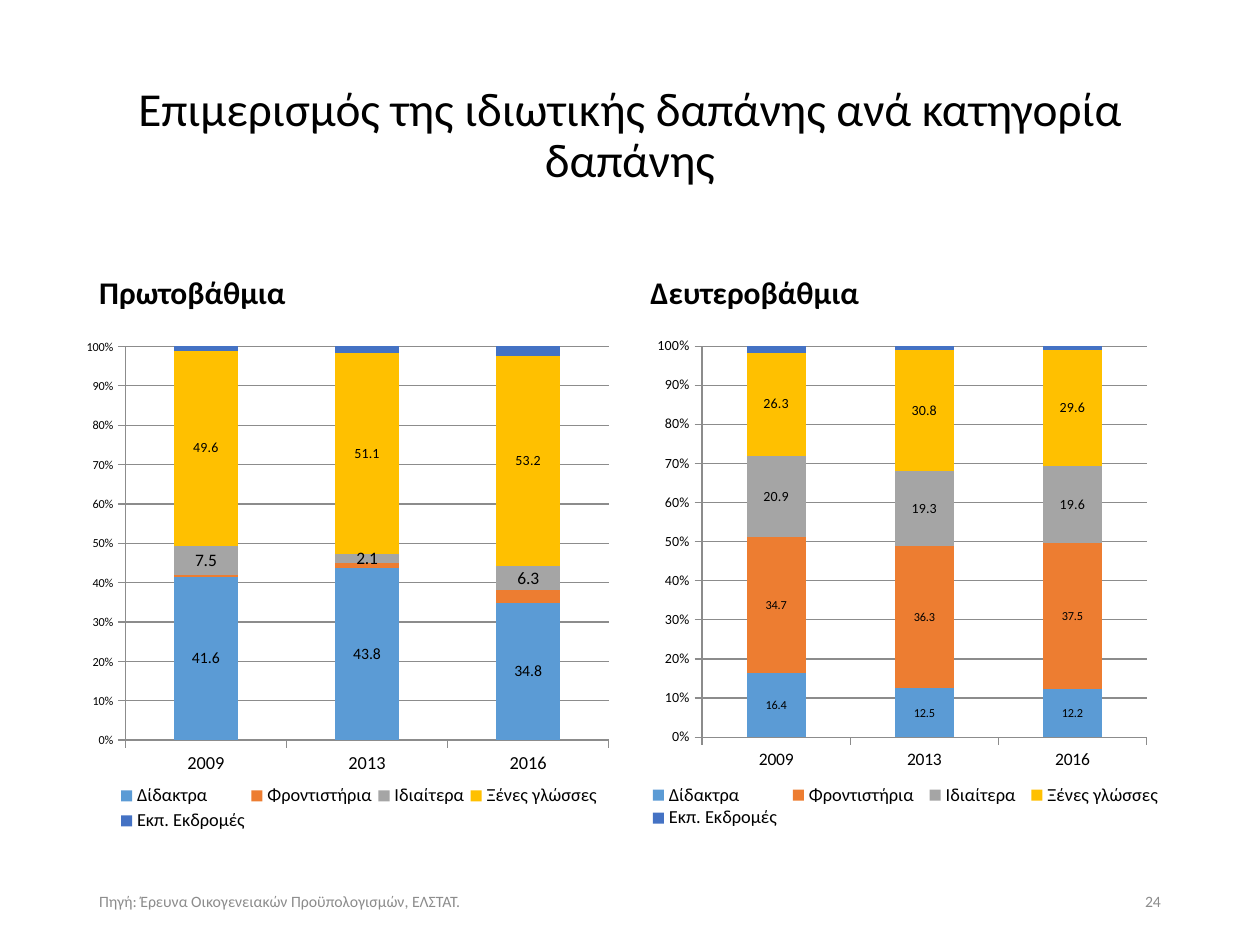
from lxml import etree
from pptx import Presentation
from pptx.chart import data as chart_data
from pptx.dml import color
from pptx.enum import chart as charts, text
from pptx.util import Pt

FONT = "Calibri"
YEARS = ["2009", "2013", "2016"]
CATEGORIES = ["Δίδακτρα", "Φροντιστήρια", "Ιδιαίτερα", "Ξένες γλώσσες", "Εκπ. Εκδρομές"]
COLOURS = ["5B9BD5", "ED7D31", "A5A5A5", "FFC000", "4472C4"]
LEFT, RIGHT = 49.5, 364.5
LEFT_WIDTH, RIGHT_WIDTH = 304.5, 306

PRIMARY = {
    "place": (LEFT, 186, LEFT_WIDTH, 300),
    "values": [(41.6, 43.8, 34.8), (0.3, 1.3, 3.2), (7.5, 2.1, 6.3),
               (49.6, 51.1, 53.2), (1.1, 1.7, 2.5)],
    "label_sizes": [9, None, 10, 8, None],
    "axis_sizes": (10.5, 7),
    "plot": (0.07, 0.04, 0.91, 0.75),
    "legend": (0.05, 0.87, 0.92, 0.1),
}
SECONDARY = {
    "place": (RIGHT, 192, RIGHT_WIDTH, 294),
    "values": [(16.4, 12.5, 12.2), (34.7, 36.3, 37.5), (20.9, 19.3, 19.6),
               (26.3, 30.8, 29.6), (1.7, 1.1, 1.1)],
    "label_sizes": [7, 7, 8, 8, None],
    "axis_sizes": (10, 8),
    "plot": (0.12, 0.02, 0.83, 0.76),
    "legend": (0.01, 0.87, 0.98, 0.09),
}


def rgb(value):
    return color.RGBColor.from_string(value)


def style_font(font, size, colour="000000", bold=False):
    font.name = FONT
    font.size = Pt(size)
    font.bold = bold
    font.color.rgb = rgb(colour)


def place_shape(shape, left, top, width, height):
    shape.left, shape.top = Pt(left), Pt(top)
    shape.width, shape.height = Pt(width), Pt(height)


def write_text(box, words, size, colour="000000", bold=False,
               align=text.PP_ALIGN.LEFT, anchor=text.MSO_ANCHOR.MIDDLE,
               line=1.0, before=0):
    frame = box.text_frame
    frame.word_wrap = True
    frame.auto_size = text.MSO_AUTO_SIZE.NONE
    frame.vertical_anchor = anchor
    para = frame.paragraphs[0]
    para.alignment = align
    para.line_spacing = line
    para.space_before = Pt(before)
    span = para.add_run()
    span.text = words
    style_font(span.font, size, colour, bold)


def add_title(page, words):
    place_shape(page.shapes.title, LEFT, 48, 621, 60)
    write_text(page.shapes.title, words, 27, align=text.PP_ALIGN.CENTER, line=0.9)


def add_heading(box, words, left, width):
    place_shape(box, left, 152.5, width, 29)
    write_text(box, words, 18, bold=True, anchor=text.MSO_ANCHOR.BOTTOM,
               line=0.9, before=7.5)


def add_footer(page, words, left, width, align):
    box = page.shapes.add_textbox(Pt(left), Pt(500.5), Pt(width), Pt(29))
    write_text(box, words, 9, "8C8C8C", align=align)


def set_layout(chart, part, index, bounds, inner=False):
    space = chart.element.nsmap["c"]
    parent = chart.element.find(f".//{{{space}}}{part}")
    for old in parent.findall(f"{{{space}}}layout"):
        parent.remove(old)
    layout = etree.Element(f"{{{space}}}layout")
    manual = etree.SubElement(layout, f"{{{space}}}manualLayout")
    settings = [("layoutTarget", "inner")] if inner else []
    settings += [("xMode", "edge"), ("yMode", "edge")]
    settings += zip("xywh", bounds)
    for name, value in settings:
        etree.SubElement(manual, f"{{{space}}}{name}", val=str(value))
    parent.insert(index, layout)


def style_axis(axis, size):
    axis.major_tick_mark = charts.XL_TICK_MARK.OUTSIDE
    axis.minor_tick_mark = charts.XL_TICK_MARK.NONE
    axis.format.line.color.rgb = rgb("8C8C8C")
    axis.format.line.width = Pt(0.75)
    style_font(axis.tick_labels.font, size)


def style_series(series, colour, label_size):
    series.format.fill.solid()
    series.format.fill.fore_color.rgb = rgb(colour)
    series.invert_if_negative = False
    if label_size:
        labels = series.data_labels
        labels.show_value = True
        labels.number_format = "0.0"
        labels.number_format_is_linked = False
        style_font(labels.font, label_size)


def add_spending_chart(page, settings):
    table = chart_data.CategoryChartData(number_format="0.0")
    table.categories = YEARS
    for name, values in zip(CATEGORIES, settings["values"]):
        table.add_series(name, values)
    chart = page.shapes.add_chart(
        charts.XL_CHART_TYPE.COLUMN_STACKED_100,
        *map(Pt, settings["place"]), table).chart
    chart.has_title = False
    style_font(chart.font, 10)
    plot = chart.plots[0]
    plot.gap_width, plot.overlap = 150, 100
    plot.vary_by_categories = False
    for series, colour, size in zip(plot.series, COLOURS, settings["label_sizes"]):
        style_series(series, colour, size)
    for axis, size in zip((chart.category_axis, chart.value_axis), settings["axis_sizes"]):
        style_axis(axis, size)
    values = chart.value_axis
    values.minimum_scale, values.maximum_scale, values.major_unit = 0, 1, 0.1
    values.tick_labels.number_format = "0%"
    values.tick_labels.number_format_is_linked = False
    values.has_major_gridlines = True
    values.major_gridlines.format.line.color.rgb = rgb("8C8C8C")
    values.major_gridlines.format.line.width = Pt(0.75)
    chart.has_legend = True
    chart.legend.position = charts.XL_LEGEND_POSITION.BOTTOM
    chart.legend.include_in_layout = False
    style_font(chart.legend.font, 10.5)
    set_layout(chart, "plotArea", 0, settings["plot"], inner=True)
    set_layout(chart, "legend", 1, settings["legend"])


def main():
    deck = Presentation()
    deck.slide_width, deck.slide_height = Pt(720), Pt(540)
    page = deck.slides.add_slide(deck.slide_layouts.get_by_name("Comparison"))
    boxes = {box.placeholder_format.idx: box for box in page.placeholders}
    add_title(page, "Επιμερισμός της ιδιωτικής δαπάνης ανά κατηγορία δαπάνης")
    add_heading(boxes[1], "Πρωτοβάθμια", LEFT, LEFT_WIDTH)
    add_heading(boxes[3], "Δευτεροβάθμια", RIGHT, RIGHT_WIDTH)
    for unused in (boxes[2], boxes[4]):
        unused.element.getparent().remove(unused.element)
    add_footer(page, "Πηγή: Έρευνα Οικογενειακών Προϋπολογισμών, ΕΛΣΤΑΤ.",
               LEFT, 250.5, text.PP_ALIGN.LEFT)
    add_footer(page, "24", 508.5, 162, text.PP_ALIGN.RIGHT)
    for settings in (PRIMARY, SECONDARY):
        add_spending_chart(page, settings)
    deck.save("out.pptx")


if __name__ == "__main__":
    main()
